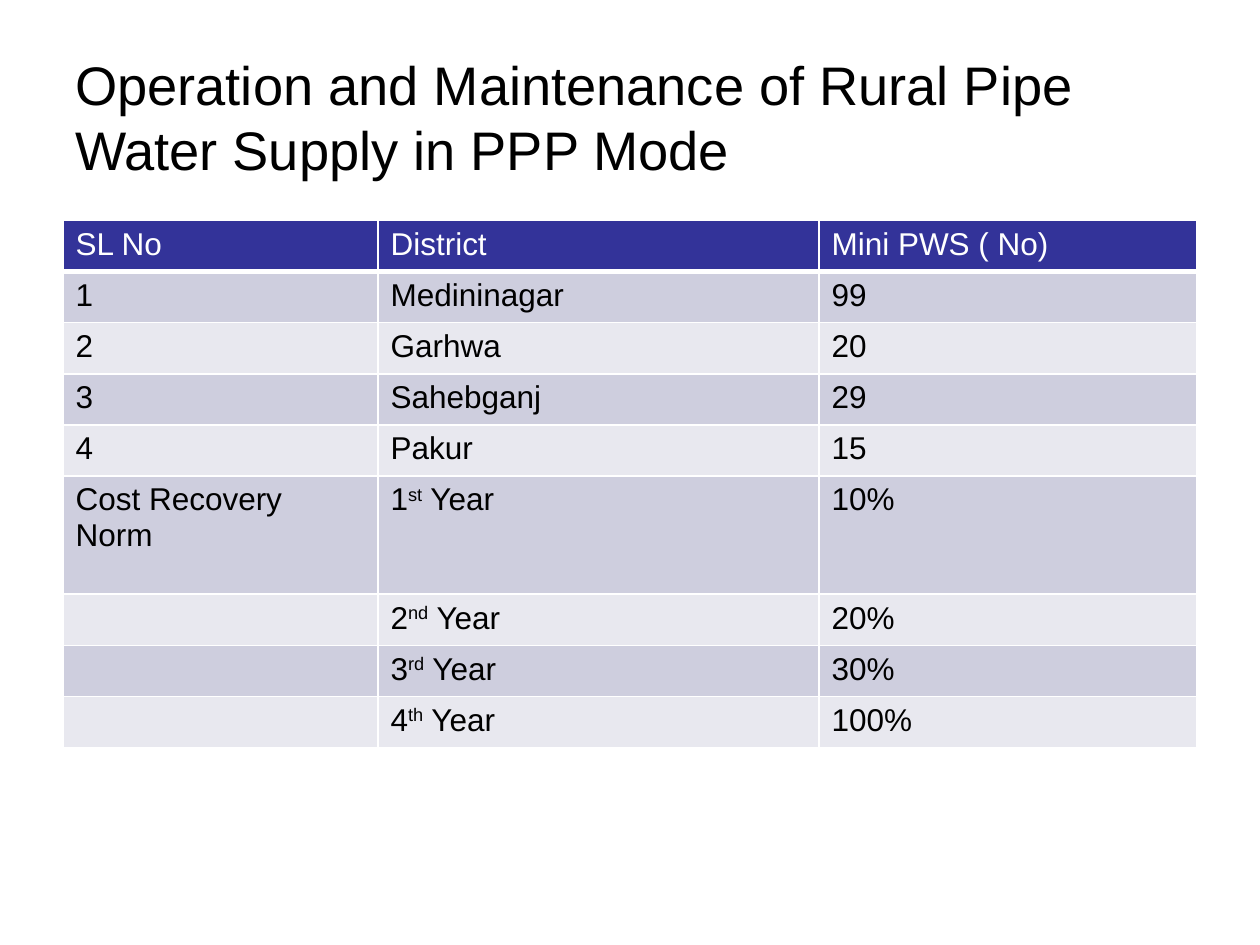
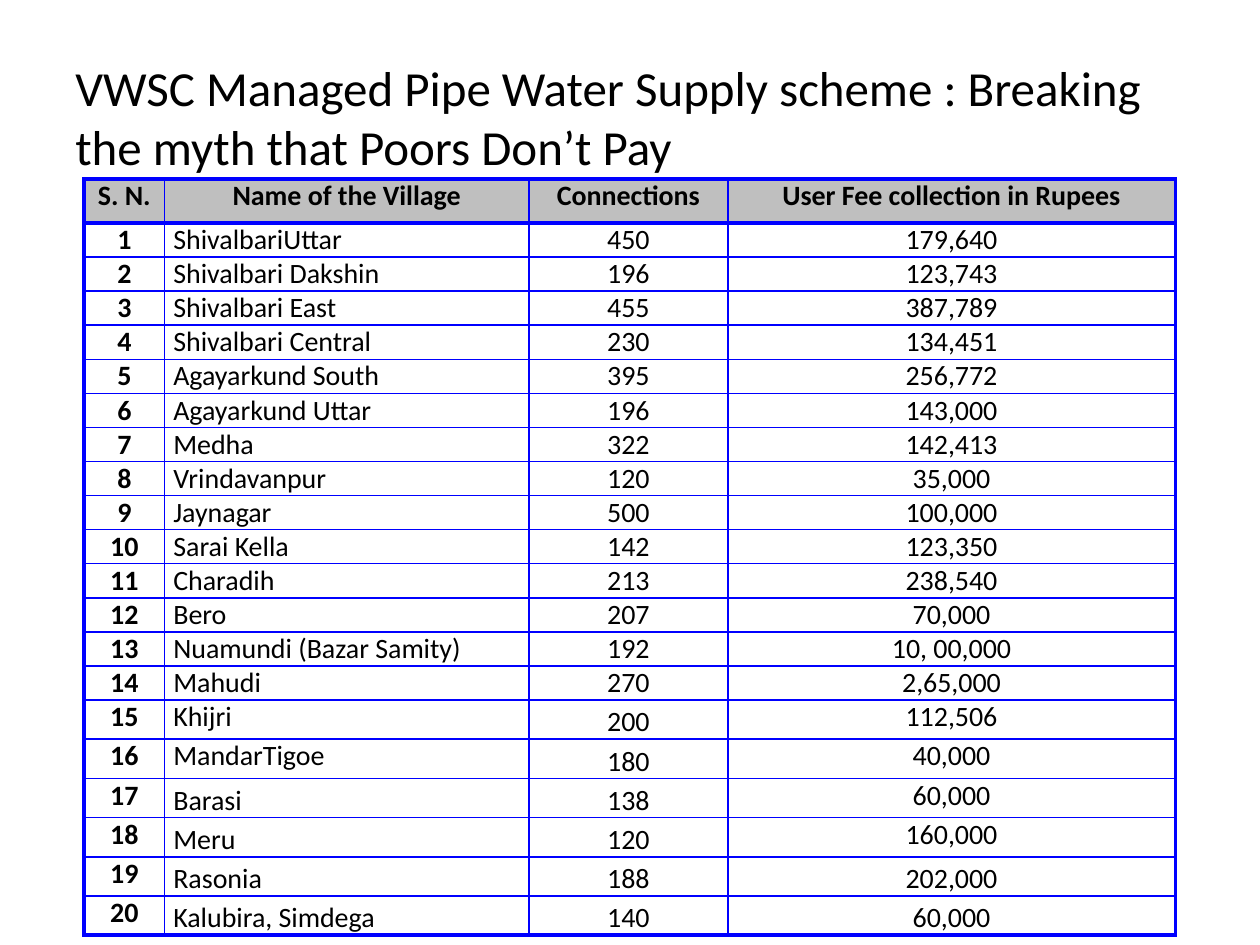
"""Build two slides of water supply tables: PPP operation and village fee collection."""
import lxml.etree
import pptx
import pptx.dml.color
import pptx.enum.text
import pptx.oxml.ns
import pptx.util

Pt = pptx.util.Pt
RGBColor = pptx.dml.color.RGBColor
BLACK = RGBColor(0x00, 0x00, 0x00)
WHITE = RGBColor(0xFF, 0xFF, 0xFF)
NAVY = RGBColor(0x33, 0x33, 0x99)
LILAC = RGBColor(0xCE, 0xCE, 0xDE)
PALE = RGBColor(0xE8, 0xE8, 0xEF)
GREY = RGBColor(0xBF, 0xBF, 0xBF)
BLUE = RGBColor(0x00, 0x00, 0xFF)
CENTER = pptx.enum.text.PP_ALIGN.CENTER


def add_titled_table(title, font, title_size, left, top, widths, heights):
    slide = deck.slides.add_slide(deck.slide_layouts[6])
    box = slide.shapes.add_textbox(Pt(36), Pt(21.6), Pt(648), Pt(90))
    frame = box.text_frame
    frame.word_wrap = True
    frame.vertical_anchor = pptx.enum.text.MSO_ANCHOR.MIDDLE
    frame.text = title
    span = frame.paragraphs[0].runs[0]
    span.font.name = font
    span.font.size = Pt(title_size)
    span.font.color.rgb = BLACK
    table = slide.shapes.add_table(
        len(heights), len(widths), Pt(left), Pt(top), Pt(sum(widths)), Pt(sum(heights))
    ).table
    table.first_row = False
    table.horz_banding = False
    for column, width in zip(table.columns, widths):
        column.width = Pt(width)
    for row, height in zip(table.rows, heights):
        row.height = Pt(height)
    return table


def style_cell(cell, borders, border_color, fill, font, size, color, bold):
    properties = cell._tc.get_or_add_tcPr()
    for side, width in zip("LRTB", borders):
        line = lxml.etree.SubElement(
            properties, pptx.oxml.ns.qn("a:ln" + side), w=str(Pt(width))
        )
        solid = lxml.etree.SubElement(line, pptx.oxml.ns.qn("a:solidFill"))
        lxml.etree.SubElement(solid, pptx.oxml.ns.qn("a:srgbClr"), val=str(border_color))
    if fill is None:
        cell.fill.background()
    else:
        cell.fill.solid()
        cell.fill.fore_color.rgb = fill
    for span in cell.text_frame.paragraphs[0].runs:
        span.font.name = font
        span.font.size = Pt(size)
        span.font.color.rgb = color
        span.font.bold = bold


deck = pptx.Presentation()
deck.slide_width = Pt(720)
deck.slide_height = Pt(540)

district_rows = [
    ("SL No", "District", "Mini PWS ( No)"),
    ("1", "Medininagar", "99"),
    ("2", "Garhwa", "20"),
    ("3", "Sahebganj", "29"),
    ("4", "Pakur", "15"),
    ("Cost Recovery Norm", ("1", "st", " Year"), "10%"),
    ("", ("2", "nd", " Year"), "20%"),
    ("", ("3", "rd", " Year"), "30%"),
    ("", ("4", "th", " Year"), "100%"),
]
table = add_titled_table(
    "Operation and Maintenance of Rural Pipe Water Supply in PPP Mode",
    "Arial", 31, 36, 126, [180, 252, 216], [29.2] * 5 + [67.6] + [29.2] * 3,
)
for row_index, values in enumerate(district_rows):
    is_header = row_index == 0
    fill = NAVY if is_header else (PALE, LILAC)[row_index % 2]
    for column_index, value in enumerate(values):
        cell = table.cell(row_index, column_index)
        if isinstance(value, tuple):
            para = cell.text_frame.paragraphs[0]
            for part in value:
                para.add_run().text = part
            para.runs[1]._r.get_or_add_rPr().set("baseline", "30000")
        elif value:
            cell.text_frame.text = value
        borders = (1, 1, 1, 3 if is_header else 1)
        style_cell(cell, borders, WHITE, fill, "Arial", 18, WHITE if is_header else BLACK, False)

village_rows = [
    ("S. N.", "Name of the Village", "Connections", "User Fee collection in Rupees"),
    ("1", "ShivalbariUttar", "450", "179,640"),
    ("2", "Shivalbari Dakshin", "196", "123,743"),
    ("3", "Shivalbari East", "455", "387,789"),
    ("4", "Shivalbari Central", "230", "134,451"),
    ("5", "Agayarkund South", "395", "256,772"),
    ("6", "Agayarkund Uttar", "196", "143,000"),
    ("7", "Medha", "322", "142,413"),
    ("8", "Vrindavanpur", "120", "35,000"),
    ("9", "Jaynagar", "500", "100,000"),
    ("10", "Sarai Kella", "142", "123,350"),
    ("11", "Charadih", "213", "238,540"),
    ("12", "Bero", "207", "70,000"),
    ("13", "Nuamundi (Bazar Samity)", "192", "10, 00,000"),
    ("14", "Mahudi", "270", "2,65,000"),
    ("15", "Khijri", "200", "112,506"),
    ("16", "MandarTigoe", "180", "40,000"),
    ("17", "Barasi", "138", "60,000"),
    ("18", "Meru", "120", "160,000"),
    ("19", "Rasonia", "188", "202,000"),
    ("20", "Kalubira, Simdega", "140", "60,000"),
]
first_loose_row = {1: 17, 2: 15, 3: 19}
last_row = len(village_rows) - 1
table = add_titled_table(
    "VWSC Managed Pipe Water Supply scheme : Breaking the myth that Poors Don’t Pay",
    "Calibri", 28, 48, 102.2, [46.1, 208.1, 113.8, 255.6], [25.2] + [19.5] * 14 + [22.4] * 6,
)
for row_index, values in enumerate(village_rows):
    is_header = row_index == 0
    for column_index, value in enumerate(values):
        cell = table.cell(row_index, column_index)
        cell.margin_left = cell.margin_right = Pt(5)
        cell.margin_top = cell.margin_bottom = 0
        cell.text_frame.text = value
        para = cell.text_frame.paragraphs[0]
        if is_header or column_index != 1:
            para.alignment = CENTER
        if row_index >= first_loose_row.get(column_index, last_row + 1):
            para.line_spacing = 1.15
        heavy_sides = (
            column_index == 0, column_index == 3, row_index <= 1, row_index in (0, last_row)
        )
        borders = [2.25 if heavy else 1 for heavy in heavy_sides]
        style_cell(
            cell, borders, BLUE, GREY if is_header else None,
            "Calibri", 16, BLACK, is_header or column_index == 0,
        )

deck.save("out.pptx")
